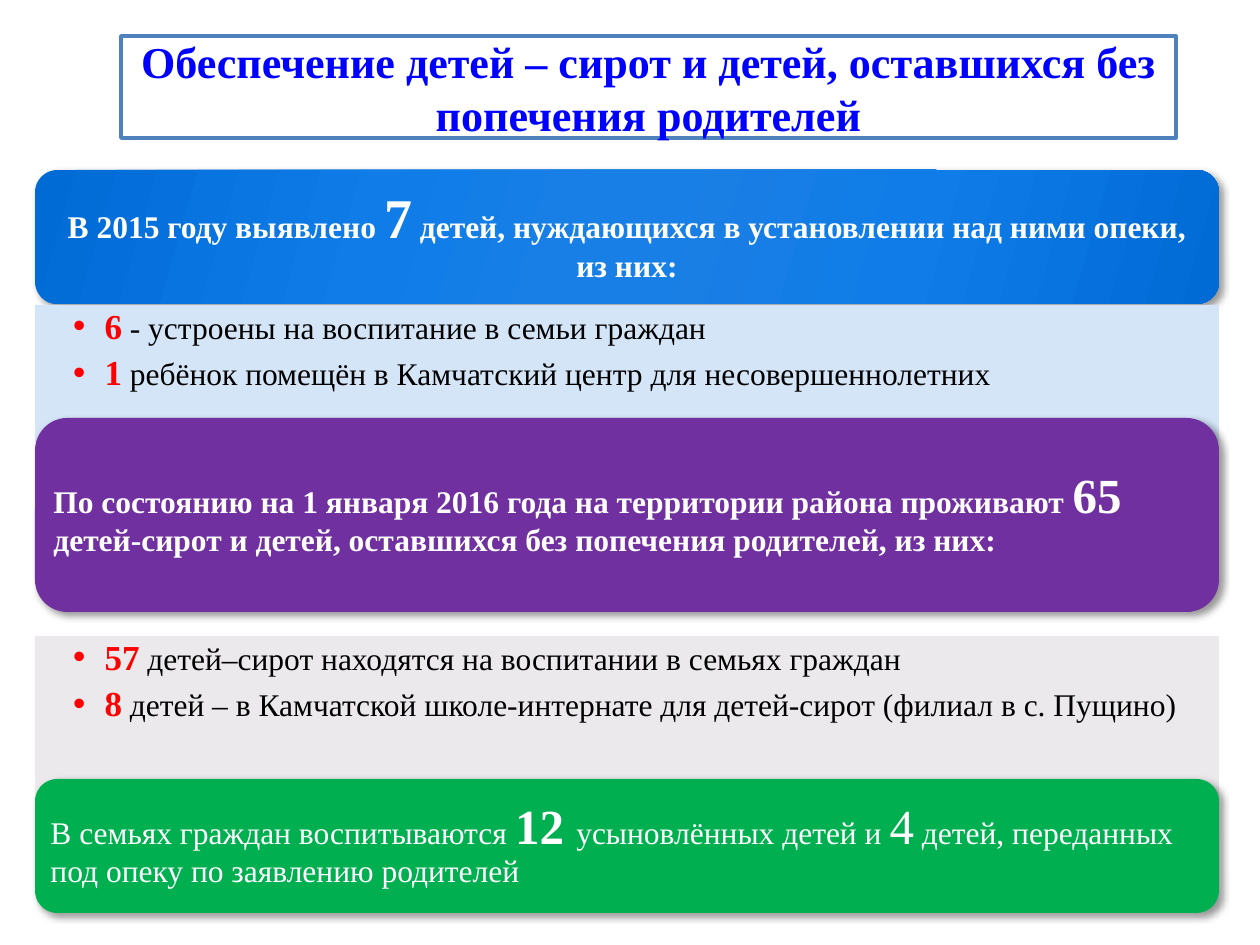
from dataclasses import dataclass

from lxml import etree
from pptx import Presentation, util as u
from pptx.dml.color import RGBColor
from pptx.enum import shapes, text
from pptx.oxml import parse_xml
from pptx.oxml.ns import nsdecls, qn

PX = u.Inches(1) // 126
LEFT, WIDTH = 35, 1184


@dataclass(frozen=True)
class Theme:
    font: str = "Times New Roman"
    title: str = "0000FF"
    border: str = "4F81BD"
    white: str = "FFFFFF"
    black: str = "000000"
    accent: str = "FF0000"
    purple: str = "7030A0"
    green: str = "00B050"
    blue_panel: str = "D4E5F7"
    grey_panel: str = "EBE9EC"
    blue_stops: tuple = ((0, "006BD5"), (30, "0F7CE8"), (45, "187FE6"),
                         (55, "1A7FE4"), (73, "0F7CE8"), (100, "006BD5"))
    title_size: float = 25.2
    body_size: int = 18
    item_number: int = 20
    bar_number: int = 28
    big_number: int = 32


THEME = Theme()


def set_attributes(target, values):
    for name, value in values.items():
        setattr(target, name, value)


def place(shape, left, top, width, height):
    set_attributes(shape, {"left": left * PX, "top": top * PX,
                           "width": width * PX, "height": height * PX})


def fill_solid(shape, color):
    shape.fill.solid()
    shape.fill.fore_color.rgb = RGBColor.from_string(color)


def fill_gradient(shape, stops, angle):
    """Fill with any number of (percent, colour) stops, angle clockwise."""
    shape.fill.gradient()
    shape.fill.gradient_angle = 360 - angle
    stop_list = next(shape.element.iter(qn("a:gsLst")))
    for stop in list(stop_list):
        stop_list.remove(stop)
    for percent, color in stops:
        stop = etree.SubElement(stop_list, qn("a:gs"), pos=str(percent * 1000))
        etree.SubElement(stop, qn("a:srgbClr"), val=color)


def add_shadow(shape):
    shape.shadow.inherit = False
    effects = shape.element.spPr.find(qn("a:effectLst"))
    effects.append(parse_xml(
        f'<a:outerShdw {nsdecls("a")} blurRad="{u.Pt(4)}" dist="{u.Pt(3)}" '
        f'dir="{45 * 60000}" algn="tl" rotWithShape="0">'
        f'<a:srgbClr val="{THEME.black}"><a:alpha val="40000"/></a:srgbClr>'
        '</a:outerShdw>'))


def format_frame(frame, anchor, margins):
    set_attributes(frame, {"word_wrap": True, "vertical_anchor": anchor,
                           "auto_size": text.MSO_AUTO_SIZE.NONE})
    for side, margin in zip(("left", "top", "right", "bottom"), margins):
        setattr(frame, f"margin_{side}", margin * PX)


def add_runs(paragraph, runs):
    """Add (wording, size, colour, bold) runs."""
    for wording, size, color, bold in runs:
        run = paragraph.add_run()
        run.text = wording
        set_attributes(run.font, {"name": THEME.font, "size": u.Pt(size),
                                  "bold": bold})
        run.font.color.rgb = RGBColor.from_string(color)


def format_title(slide, wording):
    title = slide.shapes.title
    place(title, 121, 36, 1055, 102)
    fill_solid(title, THEME.white)
    title.line.color.rgb = RGBColor.from_string(THEME.border)
    title.line.width = u.Pt(2)
    format_frame(title.text_frame, text.MSO_ANCHOR.MIDDLE, (13, 6, 13, 6))
    paragraph = title.text_frame.paragraphs[0]
    paragraph.alignment = text.PP_ALIGN.CENTER
    add_runs(paragraph, [(wording, THEME.title_size, THEME.title, True)])


def add_bar(slide, top, height, runs, color=None,
            alignment=text.PP_ALIGN.LEFT):
    """Add a rounded heading bar; without a colour it gets the blue gradient."""
    bar = slide.shapes.add_shape(shapes.MSO_SHAPE.ROUNDED_RECTANGLE, 0, 0, 0, 0)
    place(bar, LEFT, top, WIDTH, height)
    if color:
        fill_solid(bar, color)
    else:
        fill_gradient(bar, THEME.blue_stops, 16)
    bar.line.fill.background()
    add_shadow(bar)
    format_frame(bar.text_frame, text.MSO_ANCHOR.MIDDLE, (9, 9, 9, 9))
    paragraph = bar.text_frame.paragraphs[0]
    set_attributes(paragraph, {"alignment": alignment, "line_spacing": 0.9})
    add_runs(paragraph, [(wording, size, THEME.white, bold)
                         for wording, size, bold in runs])


def fill_panel(panel, top, height, color, items):
    """Turn a body placeholder into a list panel in front of earlier shapes."""
    panel.element.getparent().append(panel.element)
    place(panel, LEFT, top, WIDTH, height)
    fill_solid(panel, color)
    frame = panel.text_frame
    format_frame(frame, text.MSO_ANCHOR.TOP, (38, 4, 20, 4))
    for index, (number, wording) in enumerate(items):
        paragraph = frame.add_paragraph() if index else frame.paragraphs[0]
        set_attributes(paragraph, {"level": 1, "line_spacing": 0.9,
                                   "space_before": u.Pt(0),
                                   "space_after": u.Pt(5)})
        properties = paragraph._p.get_or_add_pPr()
        properties.set("marL", str(u.Inches(0.25)))
        properties.set("indent", str(-u.Inches(0.25)))
        etree.SubElement(properties, qn("a:buChar"), char="•")
        add_runs(paragraph, [
            (number, THEME.item_number, THEME.accent, True),
            (wording, THEME.body_size, THEME.black, False)])


def main():
    presentation = Presentation()
    set_attributes(presentation, {"slide_width": 1260 * PX,
                                  "slide_height": 945 * PX})
    slide = presentation.slides.add_slide(presentation.slide_layouts[3])
    settled, living = slide.placeholders[1], slide.placeholders[2]
    body, number = THEME.body_size, THEME.bar_number

    format_title(slide, "Обеспечение детей – сирот и детей, оставшихся без "
                        "попечения родителей")
    add_bar(slide, 170, 134, [
        ("В 2015 году выявлено ", body, True),
        ("7", THEME.big_number, True),
        (" детей, нуждающихся в установлении над ними опеки, из них:",
         body, True)], alignment=text.PP_ALIGN.CENTER)
    fill_panel(settled, 305, 137, THEME.blue_panel, [
        ("6", " - устроены на воспитание в семьи граждан"),
        ("1", " ребёнок помещён в Камчатский центр для несовершеннолетних")])
    add_bar(slide, 418, 194, [
        ("По состоянию на 1 января 2016 года на территории района проживают ",
         body, True),
        ("65", number, True),
        (" детей-сирот и детей, оставшихся без попечения родителей, из них:",
         body, True)], THEME.purple)
    fill_panel(living, 636, 169, THEME.grey_panel, [
        ("57", " детей–сирот находятся на воспитании в семьях граждан"),
        ("8", " детей – в Камчатской школе-интернате для детей-сирот "
              "(филиал в с. Пущино)")])
    add_bar(slide, 779, 134, [
        ("В семьях граждан воспитываются ", body, False),
        ("12 ", number, True),
        ("усыновлённых детей и ", body, False),
        ("4", number, False),
        (" детей, переданных под опеку по заявлению родителей", body, False)],
        THEME.green)
    presentation.save("out.pptx")


if __name__ == "__main__":
    main()
